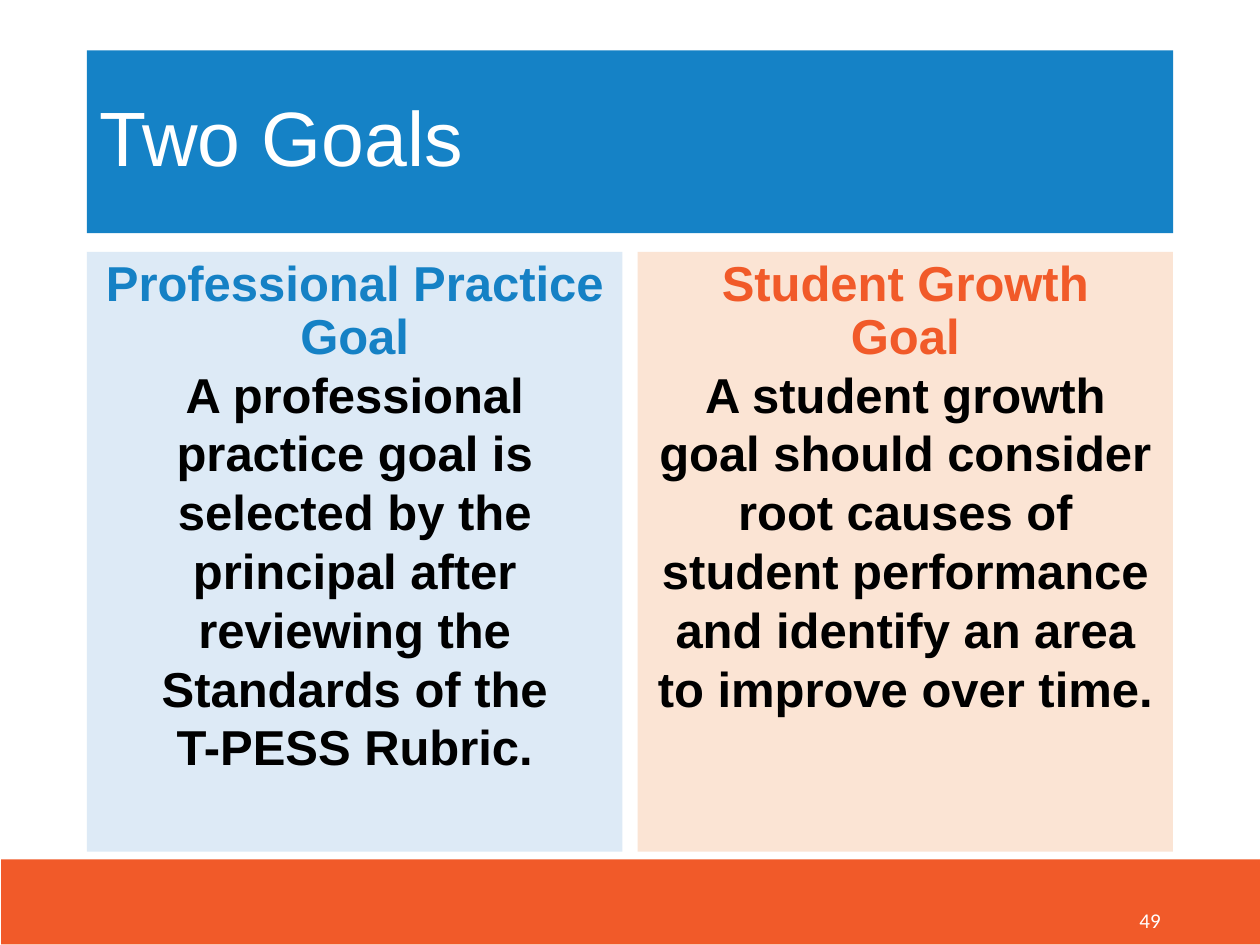
from pptx import Presentation
from pptx.dml.color import RGBColor
from pptx.enum.shapes import MSO_SHAPE as Shape
from pptx.enum.text import MSO_ANCHOR as Anchor, PP_ALIGN as Align
from pptx.util import Pt

COLORS = {
    "title_blue": "1582C6",
    "heading_blue": "1581C5",
    "pale_blue": "DDEAF6",
    "orange": "F15A29",
    "pale_orange": "FBE4D4",
    "white": "FFFFFF",
    "black": "000000",
}
LEFT, COLUMN_WIDTH, COLUMN_STEP = 49.68, 306, 314.64
GOALS = [
    ("pale_blue", "heading_blue", ["Professional Practice Goal"],
     ["A professional practice goal is selected by the principal after "
      "reviewing the Standards of the", "T-PESS Rubric."]),
    ("pale_orange", "orange", ["Student Growth", "Goal"],
     ["A student growth goal should consider root causes of student "
      "performance and identify an area to improve over time."]),
]


def color(name):
    """Return the named colour."""
    return RGBColor.from_string(COLORS[name])


def add_panel(page, left, top, width, height, fill, anchor=Anchor.TOP):
    """Add a plain filled rectangle and return its text frame."""
    panel = page.shapes.add_shape(
        Shape.RECTANGLE, Pt(left), Pt(top), Pt(width), Pt(height))
    panel.shadow.inherit = False
    panel.fill.solid()
    panel.fill.fore_color.rgb = color(fill)
    panel.line.fill.background()
    panel.text_frame.word_wrap = True
    panel.text_frame.vertical_anchor = anchor
    return panel.text_frame


def write(para, lines, size, ink, align, font="Arial", bold=False, spacing=1.0):
    """Fill a paragraph with one run per forced line."""
    para.alignment = align
    para.line_spacing = spacing
    for index, line in enumerate(lines):
        if index:
            para.add_line_break()
        span = para.add_run()
        span.text = line
        span.font.name = font
        span.font.size = Pt(size)
        span.font.bold = bold
        span.font.color.rgb = color(ink)


def add_goal(page, left, fill, ink, heading, body):
    """Add a goal column with its heading and description."""
    frame = add_panel(page, left, 144, COLUMN_WIDTH, 342.72, fill)
    write(frame.paragraphs[0], heading, 28, ink, Align.CENTER,
          bold=True, spacing=Pt(30.3))
    write(frame.add_paragraph(), body, 28, "black", Align.CENTER,
          bold=True, spacing=Pt(33.6))


def add_page_number(page, number):
    """Add the page number in the footer band."""
    box = page.shapes.add_textbox(Pt(508.32), Pt(511.2), Pt(162), Pt(28.8))
    box.text_frame.word_wrap = True
    box.text_frame.vertical_anchor = Anchor.MIDDLE
    write(box.text_frame.paragraphs[0], [number], 12, "white", Align.RIGHT,
          font="Calibri")


def main():
    """Build and save the slide."""
    deck = Presentation()
    deck.slide_width, deck.slide_height = Pt(720), Pt(540)
    page = deck.slides.add_slide(deck.slide_layouts[6])
    add_panel(page, 0.72, 491.04, 720, 48.6, "orange")
    title = add_panel(page, LEFT, 28.8, 620.64, 104.4, "title_blue", Anchor.MIDDLE)
    write(title.paragraphs[0], ["Two Goals"], 44, "white", Align.LEFT, spacing=0.9)
    add_page_number(page, "49")
    for index, goal in enumerate(GOALS):
        add_goal(page, LEFT + index * COLUMN_STEP, *goal)
    deck.save("out.pptx")


if __name__ == "__main__":
    main()
